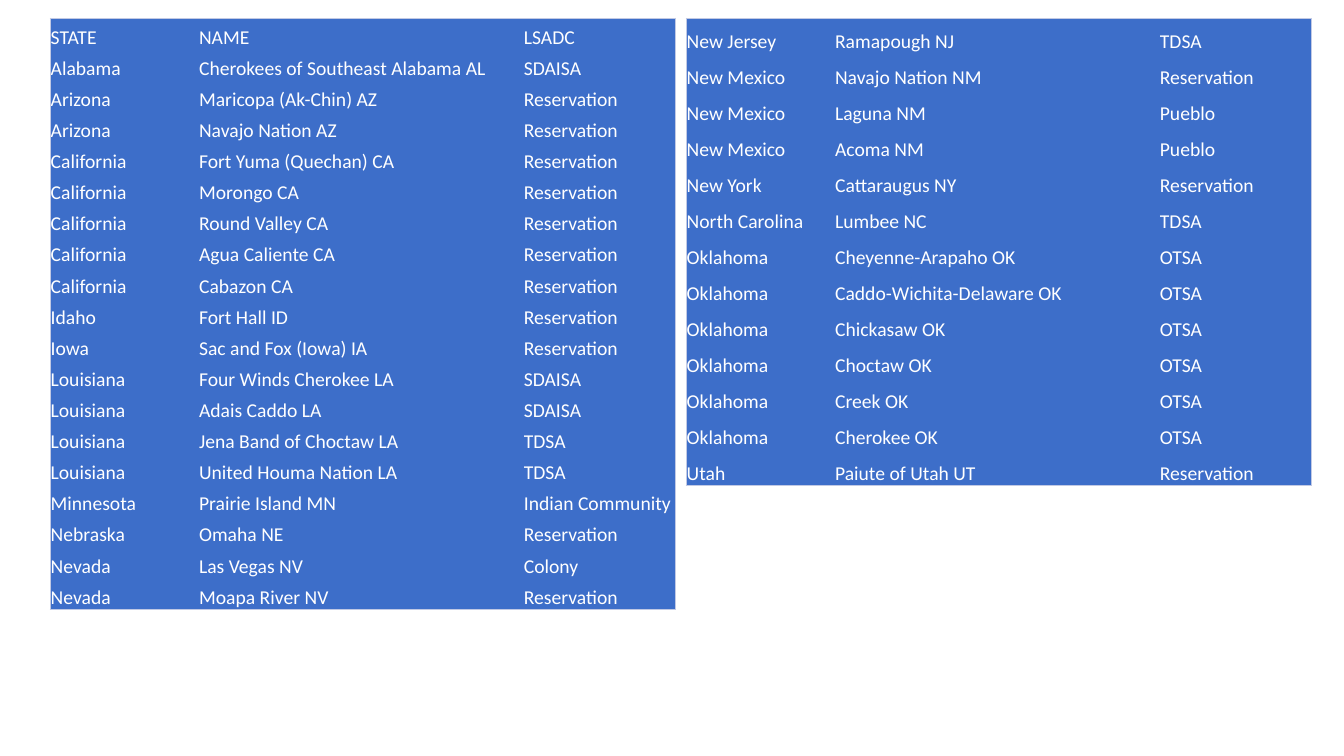
import dataclasses

import pptx
import pptx.dml.color
import pptx.enum.text
import pptx.oxml
import pptx.oxml.ns
import pptx.table
import pptx.util

Pt = pptx.util.Pt

PANEL_BLUE = "3D6EC9"
OUTLINE = "C1C9E4"
COLUMN_WIDTHS = (106, 232, 108.6)
TABLE_TOP = 13


@dataclasses.dataclass(frozen=True)
class AreaTable:
    left: float
    row_height: float
    rows: list[tuple[str, str, str]]


FIRST_AREAS = AreaTable(35.6, 22.24, [
    ("STATE", "NAME", "LSADC"),
    ("Alabama", "Cherokees of Southeast Alabama AL", "SDAISA"),
    ("Arizona", "Maricopa (Ak-Chin) AZ", "Reservation"),
    ("Arizona", "Navajo Nation AZ", "Reservation"),
    ("California", "Fort Yuma (Quechan) CA", "Reservation"),
    ("California", "Morongo CA", "Reservation"),
    ("California", "Round Valley CA", "Reservation"),
    ("California", "Agua Caliente CA", "Reservation"),
    ("California", "Cabazon CA", "Reservation"),
    ("Idaho", "Fort Hall ID", "Reservation"),
    ("Iowa", "Sac and Fox (Iowa) IA", "Reservation"),
    ("Louisiana", "Four Winds Cherokee LA", "SDAISA"),
    ("Louisiana", "Adais Caddo LA", "SDAISA"),
    ("Louisiana", "Jena Band of Choctaw LA", "TDSA"),
    ("Louisiana", "United Houma Nation LA", "TDSA"),
    ("Minnesota", "Prairie Island MN", "Indian Community"),
    ("Nebraska", "Omaha NE", "Reservation"),
    ("Nevada", "Las Vegas NV", "Colony"),
    ("Nevada", "Moapa River NV", "Reservation"),
])
REMAINING_AREAS = AreaTable(489.9, 25.7, [
    ("New Jersey", "Ramapough NJ", "TDSA"),
    ("New Mexico", "Navajo Nation NM", "Reservation"),
    ("New Mexico", "Laguna NM", "Pueblo"),
    ("New Mexico", "Acoma NM", "Pueblo"),
    ("New York", "Cattaraugus NY", "Reservation"),
    ("North Carolina", "Lumbee NC", "TDSA"),
    ("Oklahoma", "Cheyenne-Arapaho OK", "OTSA"),
    ("Oklahoma", "Caddo-Wichita-Delaware OK", "OTSA"),
    ("Oklahoma", "Chickasaw OK", "OTSA"),
    ("Oklahoma", "Choctaw OK", "OTSA"),
    ("Oklahoma", "Creek OK", "OTSA"),
    ("Oklahoma", "Cherokee OK", "OTSA"),
    ("Utah", "Paiute of Utah UT", "Reservation"),
])


def rgb(value: str) -> pptx.dml.color.RGBColor:
    return pptx.dml.color.RGBColor.from_string(value)


def write(cell: pptx.table._Cell, text: str, *, size: float = 14,
          font: str = "Calibri", color: str = "FFFFFF") -> None:
    run = cell.text_frame.paragraphs[0].add_run()
    run.text = text
    run.font.size = Pt(size)
    run.font.name = font
    run.font.color.rgb = rgb(color)


def set_borders(cell: pptx.table._Cell, outer: dict[str, bool]) -> None:
    """Line the outer edges of a cell and clear the inner ones."""
    properties = cell._tc.get_or_add_tcPr()
    for edge, is_outer in outer.items():
        paint = (f'<a:solidFill><a:srgbClr val="{OUTLINE}"/></a:solidFill>'
                 if is_outer else "<a:noFill/>")
        properties.append(pptx.oxml.parse_xml(
            f'<a:ln{edge} {pptx.oxml.ns.nsdecls("a")} w="{Pt(0.5)}">{paint}</a:ln{edge}>'))


def draw_table(slide: pptx.slide.Slide, areas: AreaTable) -> None:
    row_count, column_count = len(areas.rows), len(COLUMN_WIDTHS)
    table = slide.shapes.add_table(
        row_count, column_count, Pt(areas.left), Pt(TABLE_TOP),
        Pt(sum(COLUMN_WIDTHS)), Pt(areas.row_height * row_count)).table
    table.first_row = False
    table.horz_banding = False
    for column, width in zip(table.columns, COLUMN_WIDTHS):
        column.width = Pt(width)
    for r, values in enumerate(areas.rows):
        table.rows[r].height = Pt(areas.row_height)
        for c, value in enumerate(values):
            cell = table.cell(r, c)
            cell.margin_left = cell.margin_right = cell.margin_top = Pt(0.6)
            cell.margin_bottom = Pt(0)
            cell.vertical_anchor = pptx.enum.text.MSO_ANCHOR.BOTTOM
            set_borders(cell, {"L": c == 0, "R": c == column_count - 1,
                               "T": r == 0, "B": r == row_count - 1})
            cell.fill.solid()
            cell.fill.fore_color.rgb = rgb(PANEL_BLUE)
            write(cell, value)


def main() -> None:
    deck = pptx.Presentation()
    deck.slide_width, deck.slide_height = Pt(960), Pt(540)
    blank_layout = deck.slide_layouts[6]
    slide = deck.slides.add_slide(blank_layout)
    for areas in (FIRST_AREAS, REMAINING_AREAS):
        draw_table(slide, areas)
    deck.save("out.pptx")


if __name__ == "__main__":
    main()
